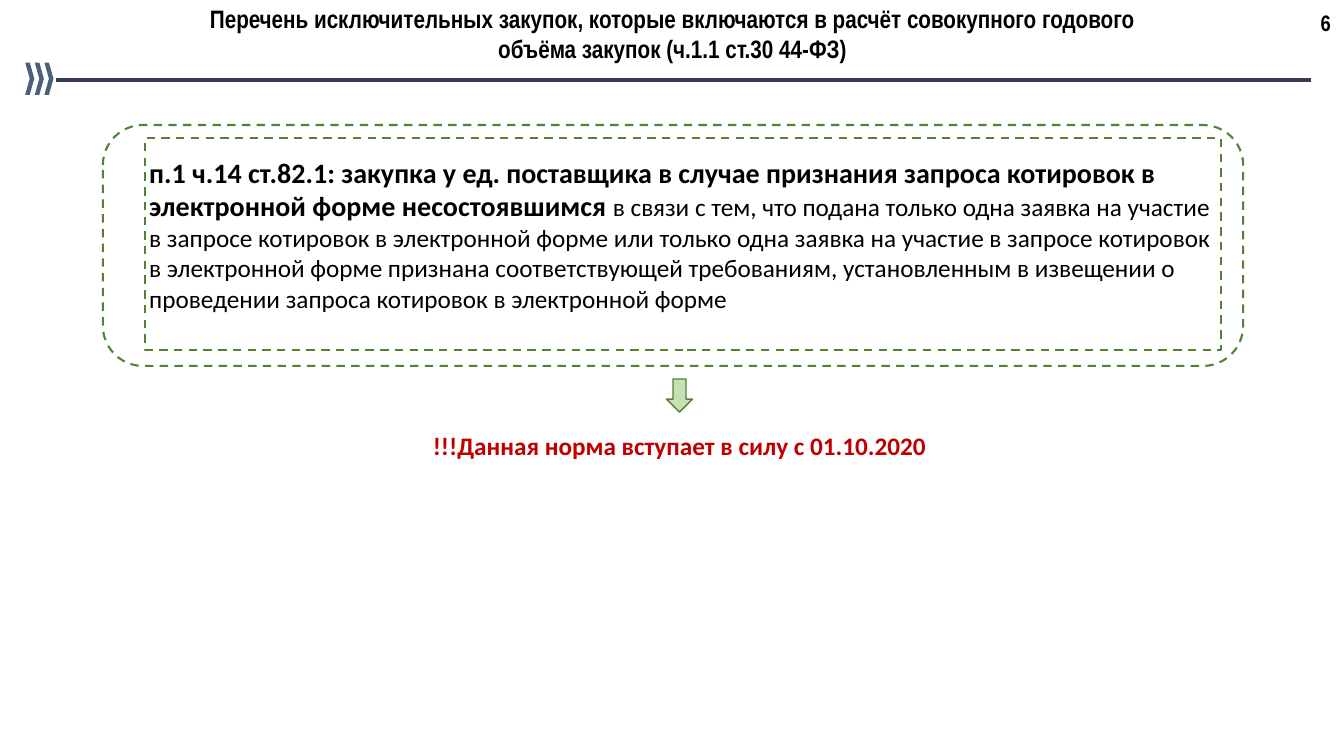
from dataclasses import dataclass

from lxml import etree
from pptx import Presentation
from pptx.dml.color import RGBColor
from pptx.enum.dml import MSO_LINE
from pptx.enum.shapes import MSO_CONNECTOR, MSO_SHAPE
from pptx.enum.text import MSO_ANCHOR, PP_ALIGN
from pptx.oxml.ns import qn
from pptx.util import Inches, Pt

TITLE = ("Перечень исключительных закупок, которые включаются в расчёт "
         "совокупного годового объёма закупок (ч.1.1 ст.30 44-ФЗ)")
PAGE_NUMBER = "6"
RULE_HEADING = ("п.1 ч.14 ст.82.1: закупка у ед. поставщика в случае признания "
                "запроса котировок в электронной форме несостоявшимся ")
RULE_DETAIL = ("в связи с тем, что подана только одна заявка на участие в запросе "
               "котировок в электронной форме или только одна заявка на участие в "
               "запросе котировок в электронной форме признана соответствующей "
               "требованиям, установленным в извещении о проведении запроса "
               "котировок в электронной форме")
EFFECTIVE_DATE = "!!!Данная норма вступает в силу с 01.10.2020"

LEFT, CENTER = PP_ALIGN.LEFT, PP_ALIGN.CENTER
TOP = MSO_ANCHOR.TOP
DASH = MSO_LINE.DASH


@dataclass(frozen=True)
class Theme:
    text: str = "000000"
    alert: str = "C00000"
    header_line: str = "333F50"
    chevron: str = "4C5E78"
    border: str = "548235"
    arrow: str = "C5E0B4"
    panel: str = "FFFFFF"
    head_font: str = "Arial Narrow"
    body_font: str = "Calibri"
    large: int = 20
    normal: int = 18
    small: int = 16


THEME = Theme()


def color(value):
    return RGBColor.from_string(value)


def write(shape, runs, align=LEFT, font=THEME.body_font, ink=THEME.text,
          inset=(0.1, 0.05)):
    """Fill a shape with one paragraph; runs are (text, size, bold)."""
    frame = shape.text_frame
    frame.word_wrap = True
    frame.vertical_anchor = TOP
    frame.margin_left = frame.margin_right = Inches(inset[0])
    frame.margin_top = frame.margin_bottom = Inches(inset[1])
    paragraph = frame.paragraphs[0]
    paragraph.alignment = align
    for text, size, bold in runs:
        run = paragraph.add_run()
        run.text = text
        run.font.name = font
        run.font.size = Pt(size)
        run.font.bold = bold
        run.font.color.rgb = color(ink)


def add_preset(slide, preset, box, fill=None, border=None, width=1.5, dash=None):
    shape = slide.shapes.add_shape(preset, *map(Inches, box))
    shape.shadow.inherit = False
    if fill:
        shape.fill.solid()
        shape.fill.fore_color.rgb = color(fill)
    else:
        shape.fill.background()
    if border:
        shape.line.color.rgb = color(border)
        shape.line.width = Pt(width)
        shape.line.dash_style = dash
    else:
        shape.line.fill.background()
    return shape


def add_text(slide, box, runs, **style):
    write(slide.shapes.add_textbox(*map(Inches, box)), runs, **style)


def add_header(slide):
    title = slide.shapes.title
    title.left, title.top, title.width, title.height = map(
        Inches, (1.67, -0.02, 10, 1.01))
    write(title, [(TITLE, THEME.normal, True)], CENTER, THEME.head_font)
    title.text_frame.paragraphs[0].line_spacing = 1.0
    add_text(slide, (13, 0.04, 0.3, 0.36), [(PAGE_NUMBER, THEME.small, True)],
             font=THEME.head_font)

    line = slide.shapes.add_connector(
        MSO_CONNECTOR.STRAIGHT, *map(Inches, (0.56, 0.79, 13, 0.79)))
    line.line.color.rgb = color(THEME.header_line)
    line.line.width = Pt(2.75)
    etree.SubElement(line._element.spPr, qn("a:effectLst"))

    for index in range(3):
        add_preset(slide, MSO_SHAPE.CHEVRON,
                   (0.25 + 0.095 * index, 0.62, 0.09, 0.32), THEME.chevron)


def add_rule(slide):
    panel = add_preset(slide, MSO_SHAPE.ROUNDED_RECTANGLE, (1.02, 1.24, 11.31, 2.39),
                       THEME.panel, THEME.border, dash=DASH)
    panel_color = panel._element.spPr.find(qn("a:solidFill"))[0]
    etree.SubElement(panel_color, qn("a:alpha"), val="90000")

    rule = add_preset(slide, MSO_SHAPE.RECTANGLE, (1.44, 1.37, 10.67, 2.1),
                      border=THEME.border, dash=DASH)
    write(rule, [(RULE_HEADING, THEME.large, True),
                 (RULE_DETAIL, THEME.normal, False)], inset=(0.04, 0.17))


def main():
    deck = Presentation()
    deck.slide_width, deck.slide_height = Inches(13.33), Inches(7.5)
    slide = deck.slides.add_slide(deck.slide_layouts[5])
    add_header(slide)
    add_rule(slide)
    add_preset(slide, MSO_SHAPE.DOWN_ARROW, (6.61, 3.76, 0.26, 0.33),
               THEME.arrow, THEME.border, width=1)
    add_text(slide, (3.74, 4.22, 6, 0.4), [(EFFECTIVE_DATE, THEME.normal, True)],
             align=CENTER, ink=THEME.alert)
    deck.save("out.pptx")


if __name__ == "__main__":
    main()
